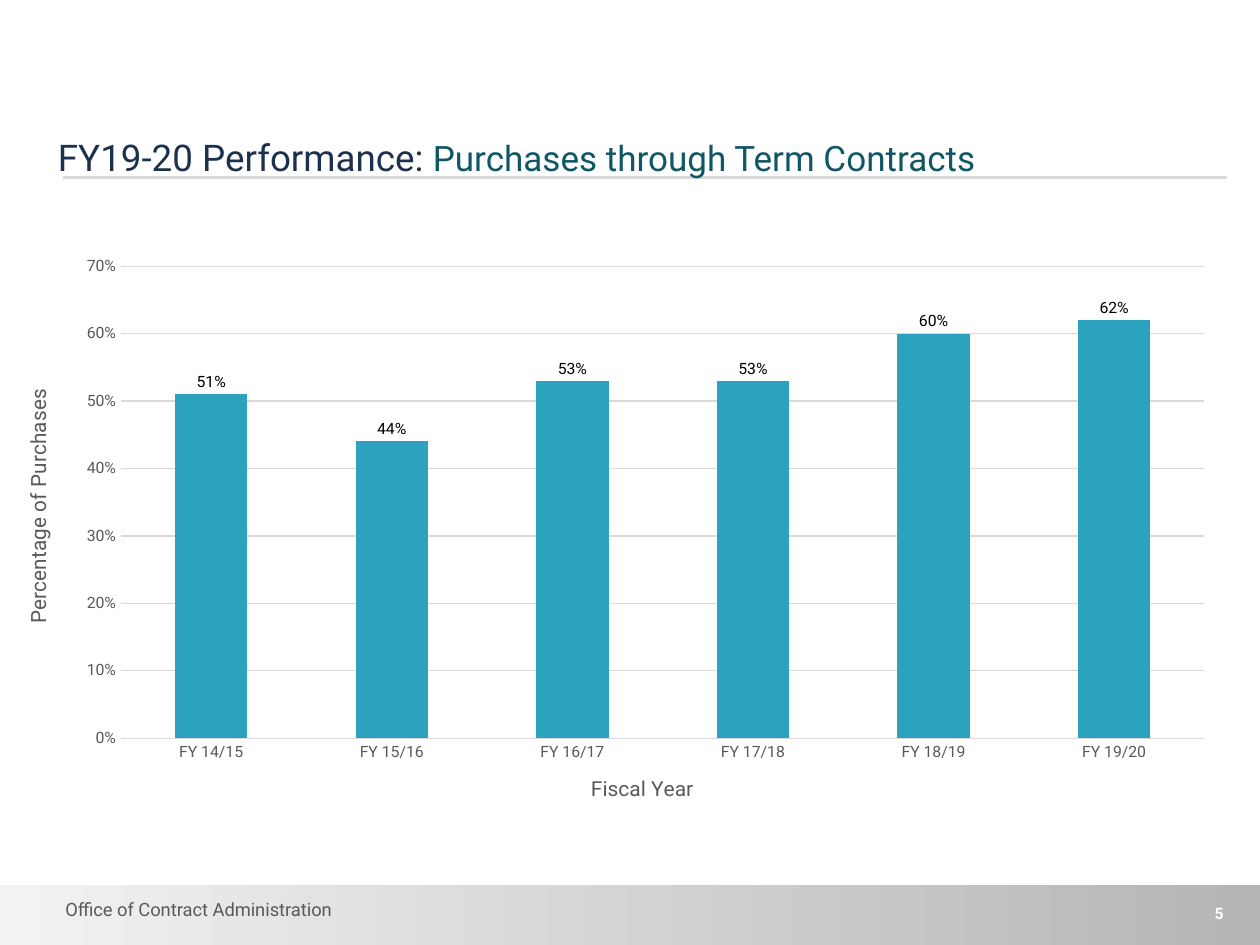
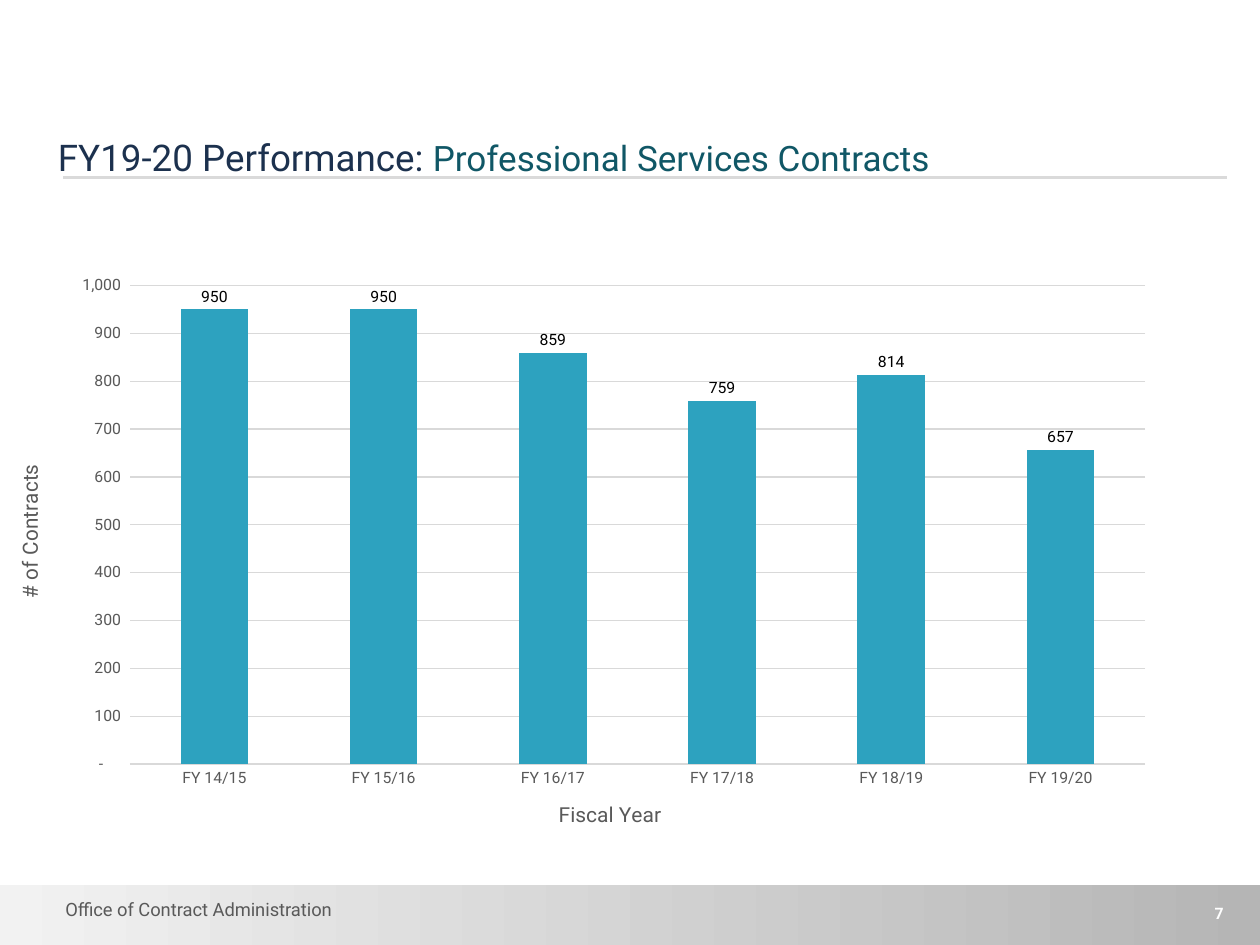
from lxml import etree
from pptx import Presentation
from pptx.chart.data import CategoryChartData
from pptx.dml.color import RGBColor
from pptx.enum.chart import XL_CHART_TYPE, XL_LABEL_POSITION, XL_TICK_MARK
from pptx.enum.shapes import MSO_CONNECTOR, MSO_SHAPE
from pptx.enum.text import MSO_ANCHOR, MSO_AUTO_SIZE, PP_ALIGN
from pptx.oxml.ns import qn
from pptx.util import Inches, Pt

FONT = "Roboto"
NAVY = RGBColor(0x1C, 0x31, 0x4E)
TEAL = RGBColor(0x10, 0x57, 0x66)
BAR_BLUE = RGBColor(0x2D, 0xA2, 0xBF)
GREY_TEXT = RGBColor(0x59, 0x59, 0x59)
GRID_GREY = RGBColor(0xD9, 0xD9, 0xD9)
RULE_GREY = RGBColor(0xDA, 0xDA, 0xDA)
BAND_DARK = RGBColor(0xB5, 0xB5, 0xB5)
BAND_LIGHT = RGBColor(0xF2, 0xF2, 0xF2)
BLACK = RGBColor(0, 0, 0)
WHITE = RGBColor(0xFF, 0xFF, 0xFF)

LEFT, RIGHT = PP_ALIGN.LEFT, PP_ALIGN.RIGHT
TOP, MIDDLE, BOTTOM = MSO_ANCHOR.TOP, MSO_ANCHOR.MIDDLE, MSO_ANCHOR.BOTTOM
STACKED = XL_CHART_TYPE.COLUMN_STACKED
INSIDE_END = XL_LABEL_POSITION.INSIDE_END
NO_TICK = XL_TICK_MARK.NONE

WIDTH, HEIGHT = Inches(10), Inches(7.5)
YEARS = [f"FY {y}/{y + 1}" for y in range(14, 20)]
COUNT_FORMAT = '_(* #,##0_);_(* \\(#,##0\\);_(* "-"??_);_(@_)'
LABEL_LIFT = 0.04


def area(left, top, width, height):
    """Turn percentages of the slide into lengths."""
    return (int(WIDTH * left / 100), int(HEIGHT * top / 100),
            int(WIDTH * width / 100), int(HEIGHT * height / 100))


def set_font(font, size, color, bold=False):
    """Apply the deck's typeface with a size and colour."""
    font.name, font.size, font.bold = FONT, Pt(size), bold
    font.color.rgb = color


def add_run(p, text, size=10, color=GREY_TEXT, bold=False):
    """Append formatted text to a paragraph."""
    r = p.add_run()
    r.text = text
    set_font(r.font, size, color, bold)


def add_text(s, box, text, align=LEFT, anchor=TOP, **style):
    """Add a one-paragraph text box."""
    tf = s.shapes.add_textbox(*area(*box)).text_frame
    tf.word_wrap = True
    tf.vertical_anchor = anchor
    p = tf.paragraphs[0]
    p.alignment = align
    add_run(p, text, **style)


def add_title(s, subject):
    """Fill the title placeholder in two colours, above the rule."""
    sp = s.shapes.title
    sp.left, sp.top, sp.width, sp.height = area(3.6, 7.33, 93, 12.27)
    tf = sp.text_frame
    tf.auto_size = MSO_AUTO_SIZE.NONE
    tf.vertical_anchor = BOTTOM
    p = tf.paragraphs[0]
    p.alignment = LEFT
    add_run(p, "FY19-20 Performance: ", size=21, color=NAVY)
    add_run(p, subject, size=20, color=TEAL)
    s.shapes.element.append(sp.element)


def add_frame(s, number):
    """Add the footer band, title rule, office name and page number."""
    band = s.shapes.add_shape(MSO_SHAPE.RECTANGLE, *area(0, 93.6, 100, 6.4))
    band.shadow.inherit = False
    band.line.fill.background()
    band.fill.gradient()
    band.fill.gradient_angle = 180
    for stop, position, color in zip(band.fill.gradient_stops, (0, 1), (BAND_DARK, BAND_LIGHT)):
        stop.position, stop.color.rgb = position, color

    x, y, w, _ = area(5, 18.8, 92.4, 0)
    rule = s.shapes.add_connector(MSO_CONNECTOR.STRAIGHT, x, y, x + w, y)
    rule.line.color.rgb, rule.line.width = RULE_GREY, Pt(1.5)
    etree.SubElement(rule.element.spPr, qn("a:effectLst"))

    add_text(s, (4.2, 94.4, 70, 3.73), "Office of Contract Administration", size=10.5)
    add_text(s, (87.3, 94.4, 10.8, 4.4), str(number), align=RIGHT, anchor=MIDDLE,
             size=9, color=WHITE, bold=True)


def set_layout(parent, index, **values):
    """Give a chart part a manual layout at a child index."""
    for old in parent.findall(qn("c:layout")):
        parent.remove(old)
    layout = etree.Element(qn("c:layout"))
    manual = etree.SubElement(layout, qn("c:manualLayout"))
    for name, value in values.items():
        etree.SubElement(manual, qn(f"c:{name}")).set("val", str(value))
    parent.insert(index, layout)


def style_axis(axis, title, x, y, rotation):
    """Format an axis and place its title in shares of the chart."""
    axis.major_tick_mark = axis.minor_tick_mark = NO_TICK
    set_font(axis.tick_labels.font, 9, GREY_TEXT)
    add_run(axis.axis_title.text_frame.paragraphs[0], title, size=12)
    element = axis.axis_title.element
    element.find(".//" + qn("a:bodyPr")).set("rot", str(rotation))
    set_layout(element, 1, xMode="edge", yMode="edge", x=x, y=y)


def label_bars(chart):
    """Show each value just above its bar."""
    for i in range(len(YEARS)):
        label = chart.plots[0].series[0].points[i].data_label
        set_font(label.font, 9, BLACK)
        label.position = INSIDE_END
    for element in chart.element.iter(qn("c:dLbl")):
        set_layout(element, 1, x=0, y=-LABEL_LIFT)


def add_bar_chart(s, box, values, number_format, top, step,
                  value_title, value_at, year_at):
    """Add a column chart of one value per fiscal year."""
    data = CategoryChartData(number_format=number_format)
    data.categories = YEARS
    data.add_series("Series 1", values)
    chart = s.shapes.add_chart(STACKED, *area(*box), data).chart
    chart.has_legend = chart.has_title = False
    set_font(chart.font, 10, BLACK)

    plot = chart.plots[0]
    plot.gap_width, plot.overlap = 150, 100
    plot.vary_by_categories = False
    fill = plot.series[0].format.fill
    fill.solid()
    fill.fore_color.rgb = BAR_BLUE

    style_axis(chart.category_axis, "Fiscal Year", *year_at, 0)
    style_axis(chart.value_axis, value_title, *value_at, -5400000)
    axis = chart.value_axis
    axis.minimum_scale, axis.maximum_scale, axis.major_unit = 0, top, step
    axis.tick_labels.number_format = number_format
    axis.tick_labels.number_format_is_linked = False
    axis.format.line.fill.background()
    for line in (chart.category_axis.format.line, axis.major_gridlines.format.line):
        line.color.rgb, line.width = GRID_GREY, Pt(0.75)

    label_bars(chart)
    set_layout(chart.element.find(".//" + qn("c:plotArea")), 0, layoutTarget="inner",
               xMode="edge", yMode="edge", x=0.11, y=0.18, w=0.86, h=0.73)


def add_page(prs, number, subject, **chart):
    """Add a framed slide with a title and a chart."""
    s = prs.slides.add_slide(prs.slide_layouts[5])
    add_frame(s, number)
    add_title(s, subject)
    add_bar_chart(s, **chart)


def main():
    """Build and save the two performance slides."""
    prs = Presentation()
    prs.slide_width, prs.slide_height = WIDTH, HEIGHT
    add_page(prs, 5, "Purchases through Term Contracts",
             box=(-1.4, 15.87, 100, 69.6), values=(0.51, 0.44, 0.53, 0.53, 0.6, 0.62),
             number_format="0%", top=0.7, step=0.1, value_title="Percentage of Purchases",
             value_at=(0.03, 0.37), year_at=(0.48, 0.96))
    add_page(prs, 7, "Professional Services Contracts",
             box=(0, 17.73, 93.7, 70.53), values=(950, 950, 859, 759, 814, 657),
             number_format=COUNT_FORMAT, top=1000, step=100, value_title="# of Contracts",
             value_at=(0.01, 0.45), year_at=(0.47, 0.96))
    prs.save("out.pptx")


if __name__ == "__main__":
    main()
